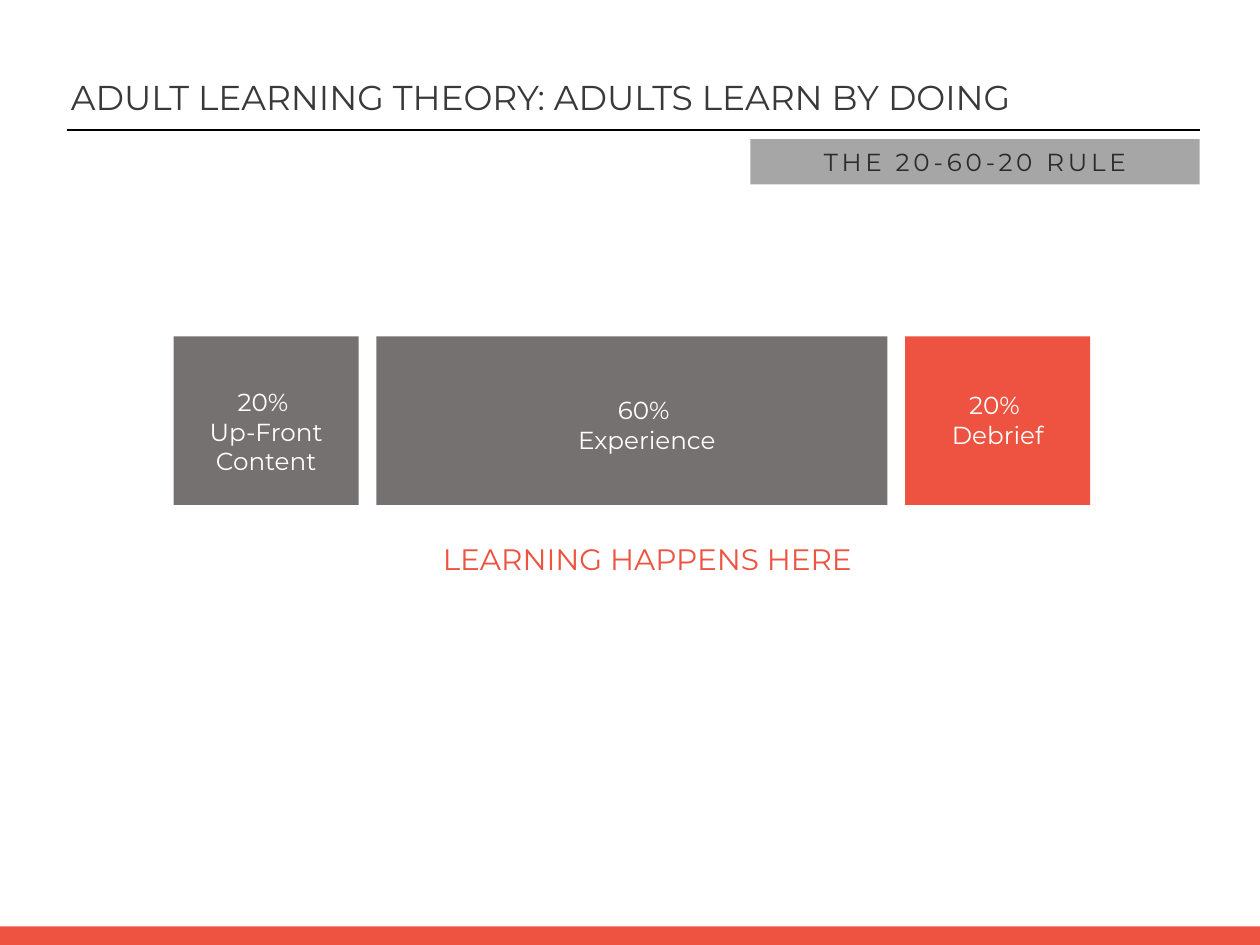
from pptx import Presentation
from pptx.dml.color import RGBColor
from pptx.enum.shapes import MSO_CONNECTOR as CONN, MSO_SHAPE as SHAPE
from pptx.enum.text import MSO_ANCHOR as ANCHOR, MSO_AUTO_SIZE as AUTO, PP_ALIGN as ALIGN
from pptx.oxml.ns import qn
from pptx.util import Cm, Pt
from lxml import etree

RED, GREY, SILVER = "ED5340", "767171", "A6A6A6"
WHITE, BLACK, DARK, INK = "FFFFFF", "000000", "3B3838", "2C2A2A"
WIDTH, HEIGHT = 36.12, 27.1


def rgb(color):
    return RGBColor.from_string(color)


def write(tf, text, size=20, color=WHITE, font="Montserrat", align=ALIGN.CENTER,
          anchor=ANCHOR.TOP, auto=AUTO.NONE, spacing=None):
    """Fill a text frame, one paragraph for each line of text."""
    tf.word_wrap = True
    tf.auto_size = auto
    tf.vertical_anchor = anchor
    for i, line in enumerate(text.split("\n")):
        p = tf.add_paragraph() if i else tf.paragraphs[0]
        p.alignment = align
        r = p.add_run()
        r.text = line
        r.font.name = font
        r.font.size = Pt(size)
        r.font.color.rgb = rgb(color)
        if spacing:
            r.font._element.set("spc", str(spacing * 100))


class SlideBuilder:
    def __init__(self, prs):
        self.s = prs.slides.add_slide(prs.slide_layouts[5])

    def title(self, x, y, w, h, text, **fmt):
        sp = self.s.shapes.title
        sp.left, sp.top, sp.width, sp.height = Cm(x), Cm(y), Cm(w), Cm(h)
        write(sp.text_frame, text, **fmt)

    def rect(self, x, y, w, h, fill):
        sp = self.s.shapes.add_shape(SHAPE.RECTANGLE, Cm(x), Cm(y), Cm(w), Cm(h))
        sp.shadow.inherit = False
        sp.fill.solid()
        sp.fill.fore_color.rgb = rgb(fill)
        sp.line.fill.background()
        return sp

    def text(self, x, y, w, h, text, **fmt):
        sp = self.s.shapes.add_textbox(Cm(x), Cm(y), Cm(w), Cm(h))
        write(sp.text_frame, text, auto=AUTO.SHAPE_TO_FIT_TEXT, **fmt)

    def line(self, x1, y1, x2, y2, color, width=1):
        cx = self.s.shapes.add_connector(CONN.STRAIGHT, Cm(x1), Cm(y1), Cm(x2), Cm(y2))
        cx.line.color.rgb = rgb(color)
        cx.line.width = Pt(width)
        etree.SubElement(cx._element.spPr, qn("a:effectLst"))


def main():
    prs = Presentation()
    prs.slide_width, prs.slide_height = Cm(WIDTH), Cm(HEIGHT)
    b = SlideBuilder(prs)

    # Footer band
    b.rect(0, 26.57, WIDTH, HEIGHT - 26.57, RED)

    # Title, rule and subtitle
    b.title(1.78, 2.06, 32.66, 1.45, "ADULT LEARNING THEORY: ADULTS LEARN BY DOING",
            size=28, color=DARK, align=ALIGN.LEFT)
    b.line(1.93, 3.73, 34.39, 3.73, BLACK)
    subtitle = b.rect(21.51, 3.99, 12.88, 1.3, SILVER)
    write(subtitle.text_frame, "THE 20-60-20 RULE", color=INK,
          anchor=ANCHOR.MIDDLE, spacing=3)

    # Three phases: width, fill, label, label top, label height, label shift
    phases = [
        (5.3, GREY, "20% \nUp-Front Content", 10.97, 2.82, 0),
        (14.65, GREY, "60% \nExperience", 11.2, 1.96, 0.43),
        (5.3, RED, "20% \nDebrief", 11.07, 1.96, 0),
    ]
    x, gap = 4.98, 0.51
    for w, fill, label, top, h, shift in phases:
        b.rect(x, 9.65, w, 4.83, fill)
        b.text(x + shift, top, w, h, label)
        x += w + gap

    # Caption below the phases
    b.text(11.23, 15.39, 14.65, 1.27, "LEARNING HAPPENS HERE", size=24, color=RED,
           anchor=ANCHOR.MIDDLE)

    prs.save("out.pptx")


if __name__ == "__main__":
    main()
